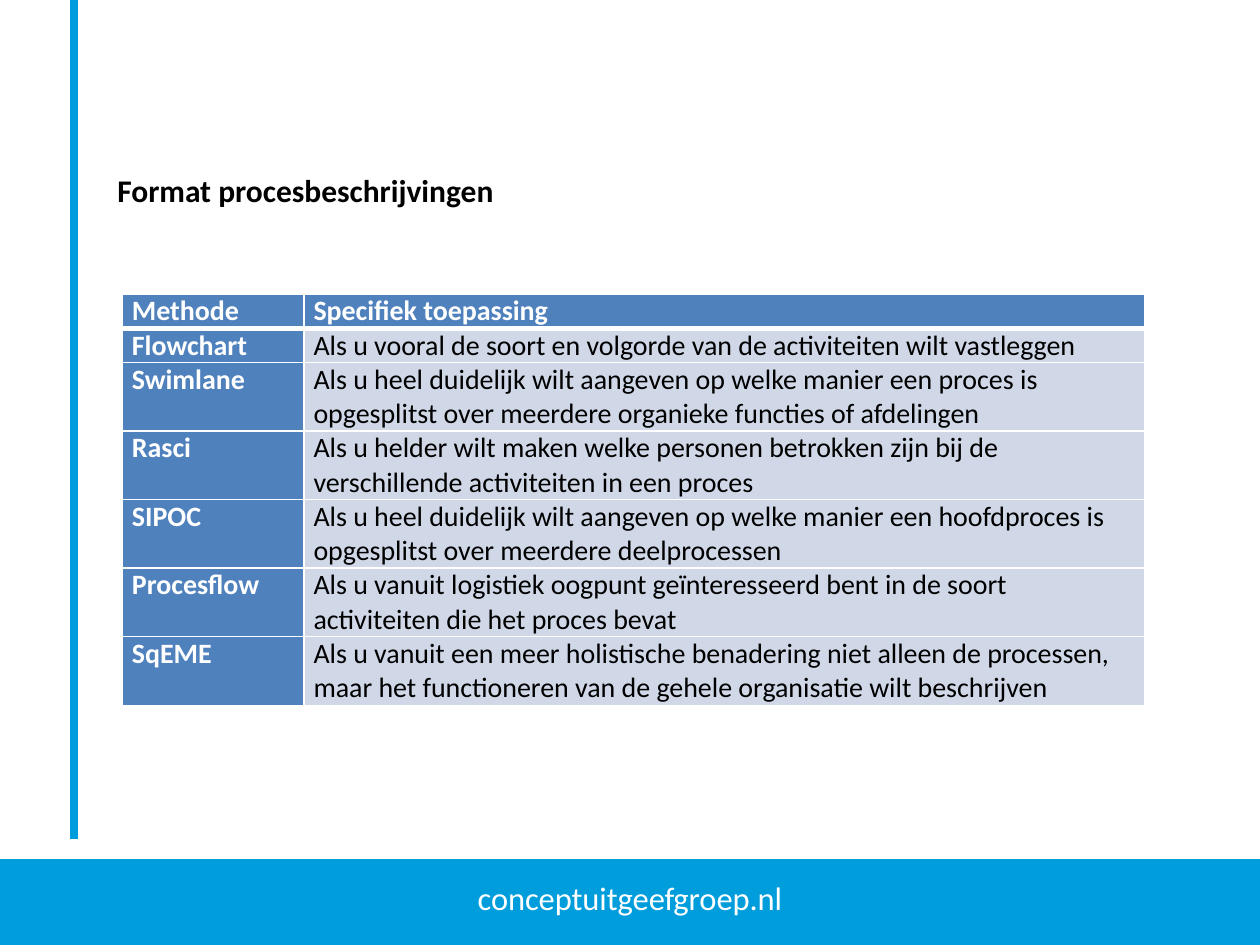
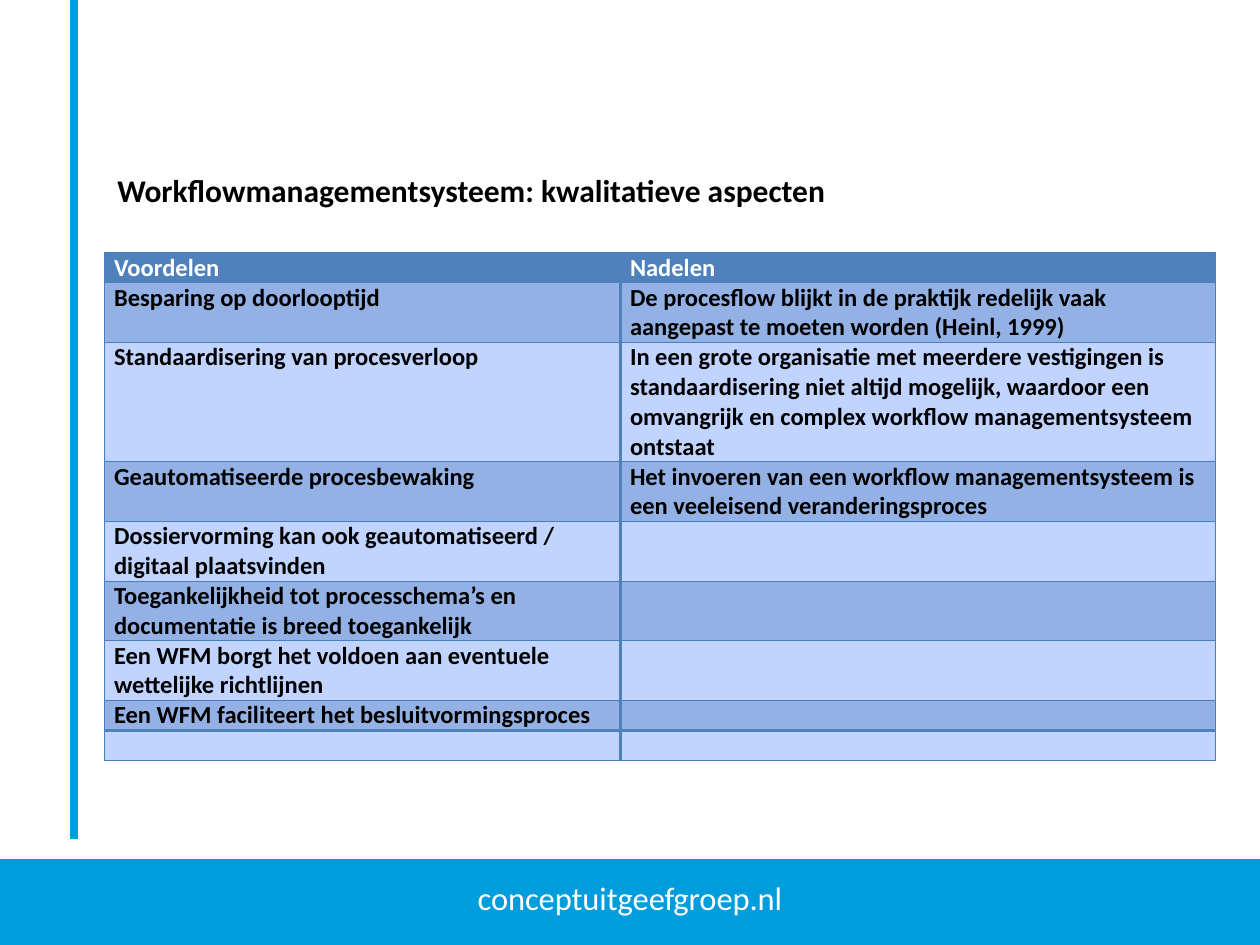
import pptx
import pptx.dml.color
import pptx.enum.shapes
import pptx.enum.text
import pptx.oxml
import pptx.oxml.ns
import pptx.util
from pptx.util import Cm

COLOURS = {
    "band": "009DDC", "header": "4F81BD", "grid": "4B7EBC", "row": "D0D8E8",
    "dark row": "93B1E4", "light row": "C0D4FF", "white": "FFFFFF", "black": "000000",
}
FOOTER = "conceptuitgeefgroep.nl"


def colour(name):
    return pptx.dml.color.RGBColor.from_string(COLOURS[name])


def write(text_frame, text, size, colour_name, bold):
    paragraph = text_frame.paragraphs[0]
    run = paragraph.add_run()
    run.text = text
    formats = {"name": "Calibri", "size": pptx.util.Pt(size), "bold": bold}
    for attribute, value in formats.items():
        setattr(run.font, attribute, value)
    run.font.color.rgb = colour(colour_name)
    return run


# Line counts set the row heights; borders are (colour, points).
slides = [
    {
        "title": "Format procesbeschrijvingen",
        "left": 2.47, "top": 5.93, "columns": [3.66, 16.94],
        "size": 16, "line height": 0.67, "lines": [1, 1, 2, 2, 2, 2, 2],
        "fills": [["header", "row"]], "text": ["white", "black"], "bold": [True, False],
        "outer": ("white", 1), "inner": ("white", 1), "divider": ("white", 1),
        "special": {1: ("white", 3)},
        "rows": [
            ("Methode", "Specifiek toepassing"),
            ("Flowchart", "Als u vooral de soort en volgorde van de activiteiten wilt vastleggen"),
            ("Swimlane", "Als u heel duidelijk wilt aangeven op welke manier een proces is "
                         "opgesplitst over meerdere organieke functies of afdelingen"),
            ("Rasci", "Als u helder wilt maken welke personen betrokken zijn bij de "
                      "verschillende activiteiten in een proces"),
            ("SIPOC", "Als u heel duidelijk wilt aangeven op welke manier een hoofdproces is "
                      "opgesplitst over meerdere deelprocessen"),
            ("Procesflow", "Als u vanuit logistiek oogpunt geïnteresseerd bent in de soort "
                           "activiteiten die het proces bevat"),
            ("SqEME", "Als u vanuit een meer holistische benadering niet alleen de processen, "
                      "maar het functioneren van de gehele organisatie wilt beschrijven"),
        ],
    },
    {
        "title": "Workflowmanagementsysteem: kwalitatieve aspecten",
        "left": 2.11, "top": 5.1, "columns": [10.4, 12],
        "size": 14, "line height": 0.59, "lines": [1, 2, 4, 2, 2, 2, 2, 1, 1],
        "fills": [["dark row"] * 2, ["light row"] * 2],
        "text": ["black", "black"], "bold": [True, True],
        "outer": ("grid", 0.75), "inner": ("grid", 0.75), "divider": ("header", 2),
        "special": {1: ("header", 0.75), 8: ("header", 2)},
        "rows": [
            ("Voordelen", "Nadelen"),
            ("Besparing op doorlooptijd",
             "De procesflow blijkt in de praktijk redelijk vaak aangepast te moeten worden "
             "(Heinl, 1999)"),
            ("Standaardisering van procesverloop",
             "In een grote organisatie met meerdere vestigingen is standaardisering niet altijd "
             "mogelijk, waardoor een omvangrijk en complex workflow managementsysteem ontstaat"),
            ("Geautomatiseerde procesbewaking",
             "Het invoeren van een workflow managementsysteem is een veeleisend "
             "veranderingsproces"),
            ("Dossiervorming kan ook geautomatiseerd / digitaal plaatsvinden", ""),
            ("Toegankelijkheid tot processchema’s en documentatie is breed toegankelijk", ""),
            ("Een WFM borgt het voldoen aan eventuele wettelijke richtlijnen", ""),
            ("Een WFM faciliteert het besluitvormingsproces", ""),
            ("", ""),
        ],
    },
]

presentation = pptx.Presentation()
presentation.slide_width = Cm(25.4)
presentation.slide_height = Cm(19.05)

for content in slides:
    slide = presentation.slides.add_slide(presentation.slide_layouts[5])

    # Footer band and vertical rule
    footer = slide.shapes.add_shape(
        pptx.enum.shapes.MSO_SHAPE.RECTANGLE, 0, Cm(17.32), Cm(25.4), Cm(1.73))
    footer.shadow.inherit = False
    footer.fill.solid()
    footer.fill.fore_color.rgb = colour("band")
    footer.line.fill.background()
    footer.text_frame.vertical_anchor = pptx.enum.text.MSO_ANCHOR.BOTTOM
    footer_run = write(footer.text_frame, FOOTER, 32, "white", False)
    footer_run.font._element.set("baseline", "30000")
    footer.text_frame.paragraphs[0].alignment = pptx.enum.text.PP_ALIGN.CENTER

    rule = slide.shapes.add_connector(
        pptx.enum.shapes.MSO_CONNECTOR.STRAIGHT, Cm(1.5), 0, Cm(1.5), Cm(16.92))
    rule.line.color.rgb = colour("band")
    rule.line.width = pptx.util.Pt(4.5)
    rule._element.spPr.append(pptx.oxml.parse_xml(
        f'<a:effectLst {pptx.oxml.ns.nsdecls("a")}/>'))

    # Title
    title = slide.shapes.title
    place = {"left": 2.11, "top": 3.33, "width": 22.4, "height": 1.02}
    for attribute, value in place.items():
        setattr(title, attribute, Cm(value))
    title.text_frame.vertical_anchor = pptx.enum.text.MSO_ANCHOR.TOP
    write(title.text_frame, content["title"], 18, "black", True)
    title.text_frame.paragraphs[0].alignment = pptx.enum.text.PP_ALIGN.LEFT

    # Table
    rows, columns = content["rows"], content["columns"]
    heights = [content["line height"] * count for count in content["lines"]]
    table = slide.shapes.add_table(
        len(rows), len(columns), Cm(content["left"]), Cm(content["top"]),
        Cm(sum(columns)), Cm(sum(heights))).table
    for column, width in zip(table.columns, columns):
        column.width = Cm(width)

    # Horizontal edges, from above the first row to below the last
    edges = [content["outer"]] + [content["inner"]] * (len(rows) - 1) + [content["outer"]]
    for edge, border in content["special"].items():
        edges[edge] = border

    for row_index, texts in enumerate(rows):
        table.rows[row_index].height = Cm(heights[row_index])
        is_header = row_index == 0
        fills = content["fills"][(row_index - 1) % len(content["fills"])]
        for column_index, text in enumerate(texts):
            cell = table.cell(row_index, column_index)
            margins = {"margin_left": 0.19, "margin_right": 0.19,
                       "margin_top": 0, "margin_bottom": 0}
            for attribute, value in margins.items():
                setattr(cell, attribute, Cm(value))
            cell.fill.solid()
            cell.fill.fore_color.rgb = colour("header" if is_header else fills[column_index])
            if text:
                write(cell.text_frame, text, content["size"],
                      "white" if is_header else content["text"][column_index],
                      is_header or content["bold"][column_index])
            else:
                cell.text_frame.paragraphs[0]._p.append(pptx.oxml.parse_xml(
                    f'<a:endParaRPr {pptx.oxml.ns.nsdecls("a")} sz="{content["size"] * 100}"/>'))

            sides = {
                "lnL": content["divider"] if column_index else content["outer"],
                "lnR": content["outer"] if column_index else content["divider"],
                "lnT": edges[row_index],
                "lnB": edges[row_index + 1],
            }
            properties = cell._tc.get_or_add_tcPr()
            for position, (tag, (name, points)) in enumerate(sides.items()):
                properties.insert(position, pptx.oxml.parse_xml(
                    f'<a:{tag} {pptx.oxml.ns.nsdecls("a")} w="{int(points * 12700)}">'
                    f'<a:solidFill><a:srgbClr val="{COLOURS[name]}"/></a:solidFill></a:{tag}>'))

presentation.save("out.pptx")
